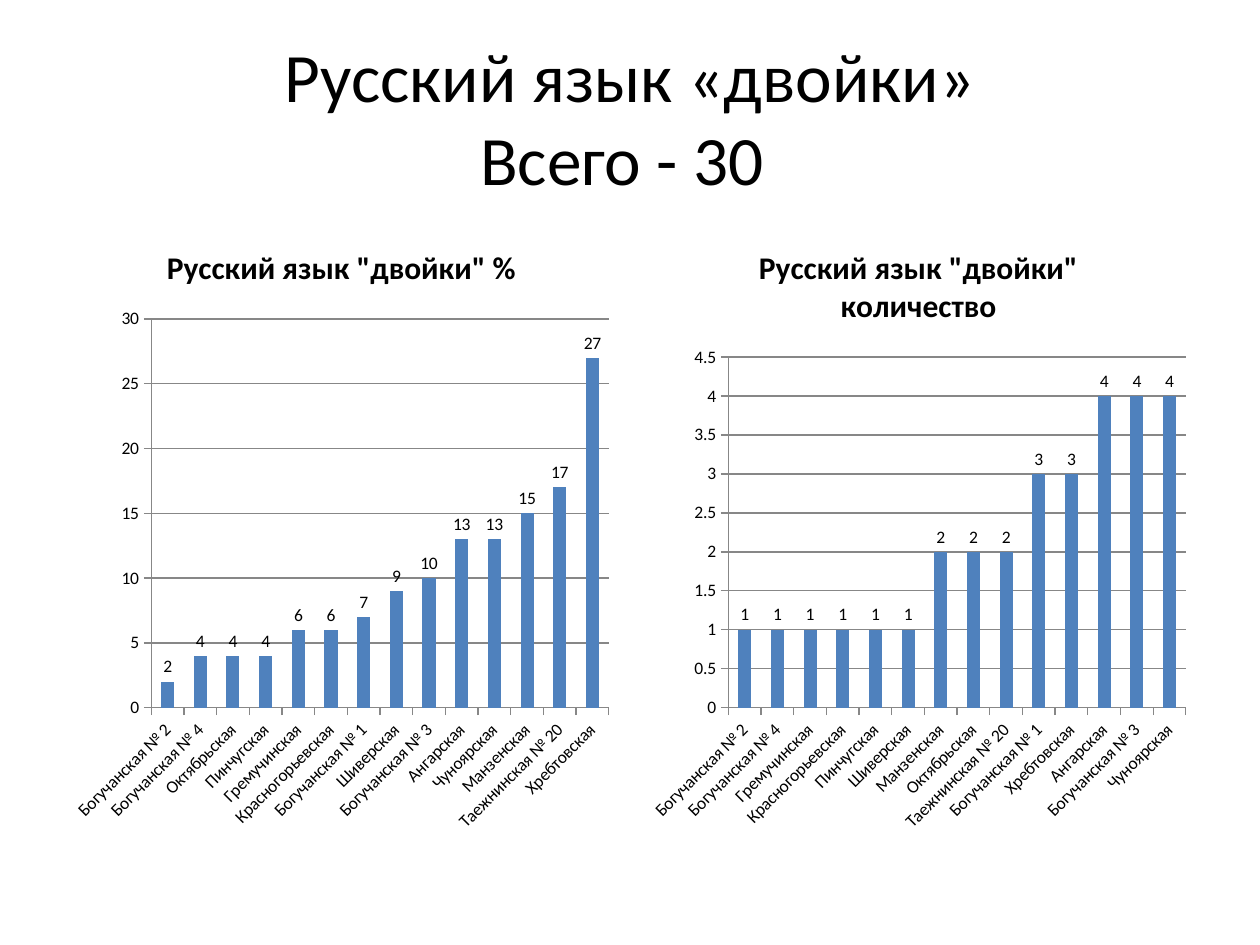
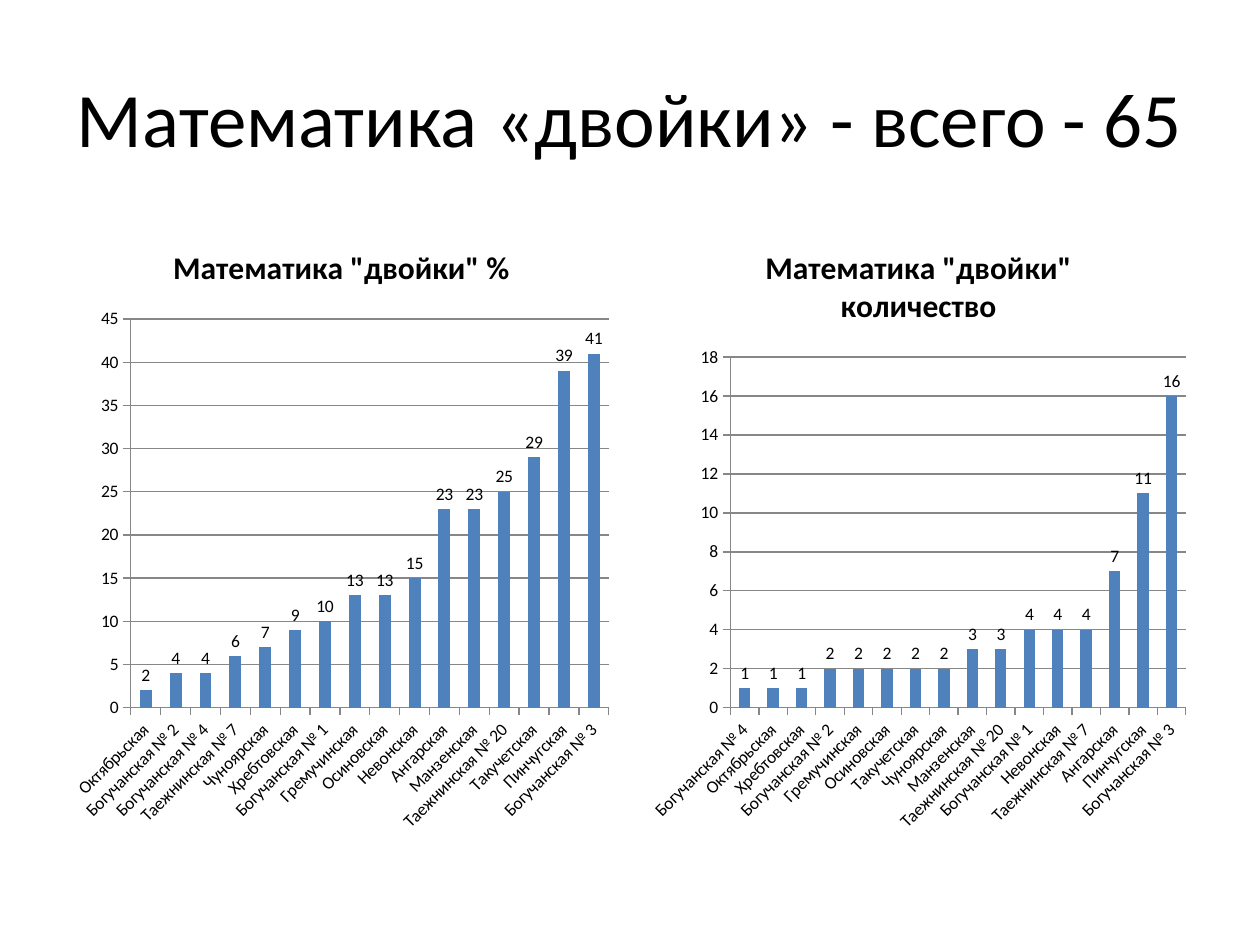
from pptx import Presentation
from pptx.chart.data import CategoryChartData
from pptx.dml.color import RGBColor
from pptx.enum.chart import XL_CHART_TYPE as ChartType
from pptx.enum.chart import XL_LABEL_POSITION as LabelPos
from pptx.enum.chart import XL_TICK_MARK as TickMark
from pptx.enum.text import MSO_ANCHOR as Anchor
from pptx.enum.text import PP_ALIGN as Align
from pptx.util import Inches, Pt

BLACK = RGBColor(0x00, 0x00, 0x00)
BLUE = RGBColor(0x4F, 0x81, 0xBD)
GRAY = RGBColor(0x87, 0x87, 0x87)
FONT = "Calibri"

MARGIN, SLIDE_W = 0.5, 10
CHART_TOP, CHART_W, CHART_H = 1.75, 4.42, 4.95
CHART_LEFTS = (MARGIN, SLIDE_W - MARGIN - CHART_W)

# Short school names: a number stands for "№" within the named group.
B1, B2, B3, B4 = (f"Богучанская № {n}" for n in range(1, 5))
T7, T20 = (f"Таежнинская № {n}" for n in (7, 20))

# Each slide: title, title size, charts (title, axis maximum, axis step, data).
SUBJECTS = [
    ("Русский язык «двойки»\vВсего - 30 ", 39.6, [
        ('Русский язык "двойки" %', 30, 5, [
            (B2, 2), (B4, 4), ("Октябрьская", 4), ("Пинчугская", 4),
            ("Гремучинская", 6), ("Красногорьевская", 6), (B1, 7),
            ("Шиверская", 9), (B3, 10), ("Ангарская", 13),
            ("Чуноярская", 13), ("Манзенская", 15), (T20, 17),
            ("Хребтовская", 27)]),
        ('Русский язык "двойки" количество', 4.5, 0.5, [
            (B2, 1), (B4, 1), ("Гремучинская", 1), ("Красногорьевская", 1),
            ("Пинчугская", 1), ("Шиверская", 1), ("Манзенская", 2),
            ("Октябрьская", 2), (T20, 2), (B1, 3), ("Хребтовская", 3),
            ("Ангарская", 4), (B3, 4), ("Чуноярская", 4)]),
    ]),
    ("Математика «двойки» - всего - 65", 44, [
        ('Математика "двойки" %', 45, 5, [
            ("Октябрьская", 2), (B2, 4), (B4, 4), (T7, 6),
            ("Чуноярская", 7), ("Хребтовская", 9), (B1, 10),
            ("Гремучинская", 13), ("Осиновская", 13), ("Невонская", 15),
            ("Ангарская", 23), ("Манзенская", 23), (T20, 25),
            ("Такучетская", 29), ("Пинчугская", 39), (B3, 41)]),
        ('Математика "двойки" количество', 18, 2, [
            (B4, 1), ("Октябрьская", 1), ("Хребтовская", 1), (B2, 2),
            ("Гремучинская", 2), ("Осиновская", 2), ("Такучетская", 2),
            ("Чуноярская", 2), ("Манзенская", 3), (T20, 3), (B1, 4),
            ("Невонская", 4), (T7, 4), ("Ангарская", 7),
            ("Пинчугская", 11), (B3, 16)]),
    ]),
]


class Deck:
    def __init__(self):
        self.prs = Presentation()
        self.prs.slide_width, self.prs.slide_height = Inches(SLIDE_W), Inches(7.5)
        self.s = None

    def new_slide(self):
        self.s = self.prs.slides.add_slide(self.prs.slide_layouts[6])

    def style_font(self, font, size, bold=False):
        font.name, font.size, font.bold = FONT, Pt(size), bold
        font.color.rgb = BLACK

    def title(self, text, size):
        sp = self.s.shapes.add_textbox(Inches(MARGIN), Inches(0.3),
                                       Inches(SLIDE_W - 2 * MARGIN), Inches(1.25))
        tf = sp.text_frame
        tf.word_wrap = True
        tf.vertical_anchor = Anchor.MIDDLE
        p = tf.paragraphs[0]
        p.text = text
        p.alignment = Align.CENTER
        for r in p.runs:
            self.style_font(r.font, size)

    def column_chart(self, left, title, top_value, step, data):
        schools, values = zip(*data)
        chart_data = CategoryChartData()
        chart_data.categories = schools
        chart_data.add_series("Series 1", values)
        chart = self.s.shapes.add_chart(
            ChartType.COLUMN_CLUSTERED, Inches(left), Inches(CHART_TOP),
            Inches(CHART_W), Inches(CHART_H), chart_data).chart
        self.style_font(chart.font, 10)
        chart.has_legend = False

        chart.has_title = True
        chart.chart_title.include_in_layout = False
        p = chart.chart_title.text_frame.paragraphs[0]
        p.text = title
        self.style_font(p.runs[0].font, 18, bold=True)

        plot = chart.plots[0]
        plot.gap_width = 150
        plot.vary_by_categories = False
        fill = plot.series[0].format.fill
        fill.solid()
        fill.fore_color.rgb = BLUE
        plot.has_data_labels = True
        labels = plot.data_labels
        labels.show_value = True
        labels.position = LabelPos.OUTSIDE_END
        self.style_font(labels.font, 10)

        self.axes(chart, top_value, step)

    def axes(self, chart, top_value, step):
        cat, val = chart.category_axis, chart.value_axis
        val.minimum_scale, val.maximum_scale, val.major_unit = 0, top_value, step
        val.has_major_gridlines = True
        for axis in (cat, val):
            axis.major_tick_mark = TickMark.OUTSIDE
            axis.minor_tick_mark = TickMark.NONE
            self.style_font(axis.tick_labels.font, 10)
        for part in (cat, val, val.major_gridlines):
            part.format.line.color.rgb = GRAY
            part.format.line.width = Pt(0.75)
        # Slant the school names by 45 degrees (60000 units per degree).
        body = cat._element.txPr.find("{*}bodyPr")
        body.set("rot", str(-45 * 60000))
        body.set("vert", "horz")


def main():
    deck = Deck()
    for title, size, charts in SUBJECTS:
        deck.new_slide()
        deck.title(title, size)
        for left, chart in zip(CHART_LEFTS, charts):
            deck.column_chart(left, *chart)
    deck.prs.save("out.pptx")


if __name__ == "__main__":
    main()
